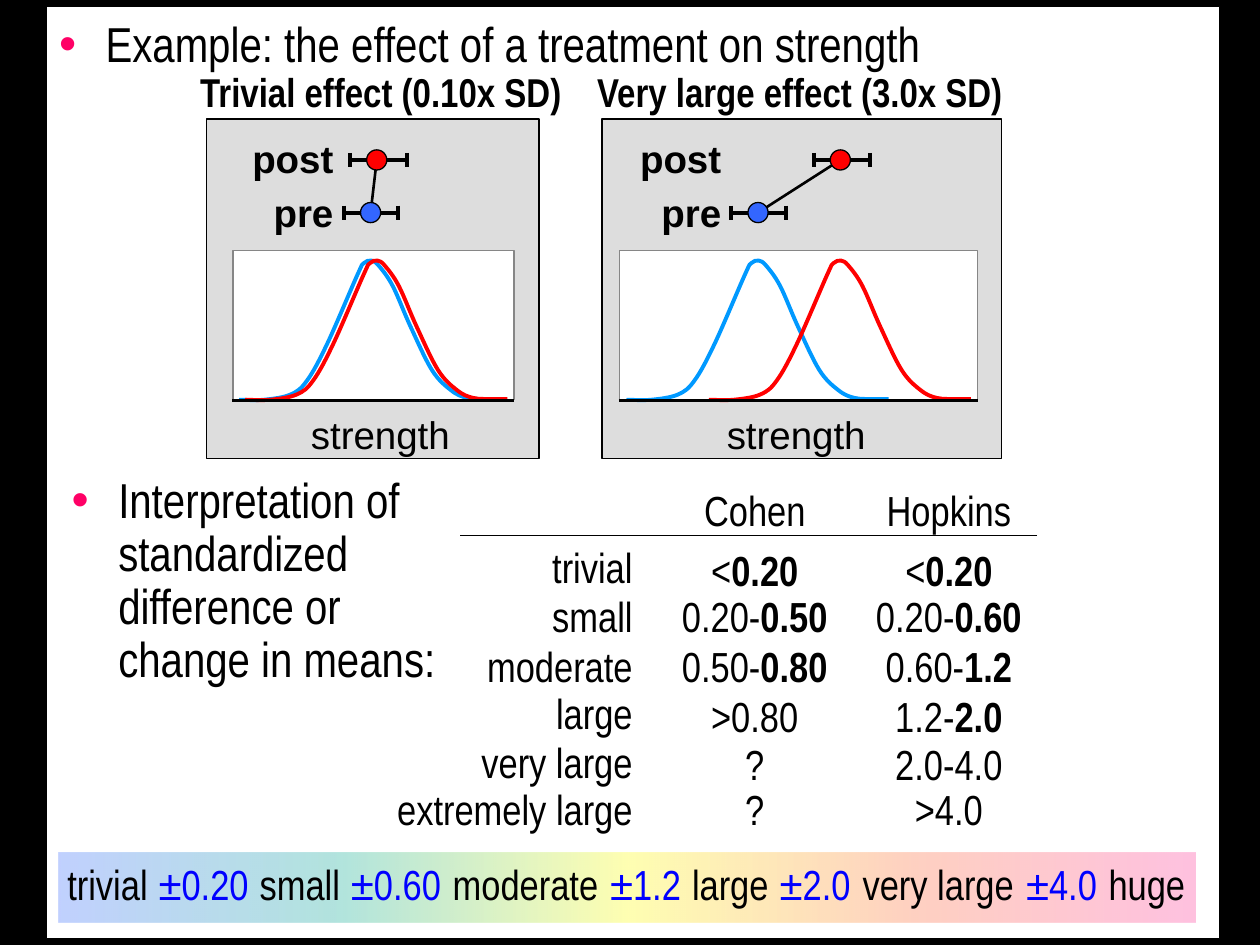
from lxml import etree
from pptx import Presentation
from pptx.dml.color import RGBColor
from pptx.enum.shapes import MSO_CONNECTOR, MSO_SHAPE
from pptx.enum.text import MSO_ANCHOR, MSO_AUTO_SIZE, PP_ALIGN
from pptx.oxml.ns import qn
from pptx.util import Pt

RECT, OVAL, LINE = MSO_SHAPE.RECTANGLE, MSO_SHAPE.OVAL, MSO_CONNECTOR.STRAIGHT
LEFT, CENTER, RIGHT = PP_ALIGN.LEFT, PP_ALIGN.CENTER, PP_ALIGN.RIGHT
TOP, FIXED, GROW = MSO_ANCHOR.TOP, MSO_AUTO_SIZE.NONE, MSO_AUTO_SIZE.SHAPE_TO_FIT_TEXT

T = dict(
    narrow="Arial Narrow", sans="Arial",
    bullet_size=28, body_size=24, title_size=23, label_size=22,
    black="000000", white="FFFFFF", panel="DDDDDD", frame="868686",
    bullet="FF0066", pre_curve="0099FF", pre_dot="3366FF", post="FF0000",
    threshold="0000FF",
    scale=[(0, "FF3399"), (25, "FF6633"), (50, "FFFF00"), (75, "01A78F"), (100, "3366FF")],
)

BULLETS = [
    ("Example: the effect of a treatment on strength", (26.6, 3.6, 670.3, 532.8), 0.95),
    ("Interpretation of \vstandardized\vdifference or\vchange in means:", (33.8, 265.7, 656, 174.2), 0.9),
]
PANELS = [
    dict(title="Trivial effect (0.10x SD)", title_x=107.3, title_w=223.2, box=(118.1, 190.1),
         plot=(133.2, 160.6), axis_x=217.4, label_right=197.6, pre=211.8, post=215.3),
    dict(title="Very large effect (3.0x SD)", title_x=334.1, title_w=247, box=(344.2, 228.2),
         plot=(354.2, 204.5), axis_x=455, label_right=419.2, pre=433.2, post=480.2),
]
BELL = [(-75.2, 0), (-60.8, 0), (-45.7, 3), (-36.3, 11), (-24.8, 32), (-7.5, 71.5),
        (-3.9, 78), (0.4, 79.5), (4.7, 76.5), (12.6, 65), (22.7, 42), (35, 17),
        (45.8, 5.5), (55.1, 1), (66.6, 0.4), (74.6, 0.4)]
COHEN_X, HOPKINS_X, LABEL_RIGHT = 431.3, 542.2, 368.6
HEADINGS = [("Cohen", 73.4, COHEN_X), ("Hopkins", 85.7, HOPKINS_X)]
ROWS = [
    (306, 307.4, ("trivial", 60.5), ("<", "0.20", 64.8), ("<", "0.20", 64.8)),
    (334.1, 334.1, ("small", 60.5), ("0.20-", "0.50", 98.6), ("0.20-", "0.60", 98.6)),
    (362.2, 362.2, ("moderate", 97.9), ("0.50-", "0.80", 98.6), ("0.60-", "1.2", 87.8)),
    (389.5, 391, ("large", 58.3), (">0.80", "", 64.8), ("1.2-", "2.0", 75.6)),
    (417.6, 418.3, ("very large", 100.8), ("?", "", 25.2), ("2.0-4.0", "", 75.6)),
    (444.2, 444.2, ("extremely large", 149), ("?", "", 25.2), (">4.0", "", 53.3)),
]
SCALE = [("trivial", 49), ("±0.20", 54.7), ("small", 49), ("±0.60", 54.7),
         ("moderate", 87.1), ("±1.2", 43.9), ("large", 46.8), ("±2.0", 43.9),
         ("very large", 90.7), ("±4.0", 43.9), ("huge", 47.5)]

prs = Presentation()
prs.slide_width, prs.slide_height = Pt(720), Pt(540)
s = prs.slides.add_slide(prs.slide_layouts[3])


def rgb(name):
    return RGBColor.from_string(T[name])


def style_run(r, size, font="narrow", color="black", bold=False):
    for key, value in dict(size=Pt(size), name=T[font], bold=bold).items():
        setattr(r.font, key, value)
    r.font.color.rgb = rgb(color)


def set_frame(tf, **values):
    for key, value in values.items():
        setattr(tf, key, value)


def add_label(text, x, y, w, h, size, align=CENTER, inset=7.2, spacing=None,
              strong="", bold=False, **fmt):
    tf = s.shapes.add_textbox(Pt(x), Pt(y), Pt(w), Pt(h)).text_frame
    set_frame(tf, word_wrap=False, auto_size=GROW, margin_left=Pt(inset), margin_right=Pt(inset))
    p = tf.paragraphs[0]
    p.alignment, p.line_spacing = align, spacing
    for part, heavy in ((text, bold), (strong, True)):
        if part:
            r = p.add_run()
            r.text = part
            style_run(r, size, bold=heavy, **fmt)


def add_block(kind, x, y, w, h, fill, line="black", weight=0.75):
    sp = s.shapes.add_shape(kind, Pt(x), Pt(y), Pt(w), Pt(h))
    sp.shadow.inherit = False
    sp.fill.solid()
    sp.fill.fore_color.rgb = rgb(fill)
    sp.line.color.rgb = rgb(line)
    sp.line.width = Pt(weight)
    return sp


def add_line(x1, y1, x2, y2, weight):
    cn = s.shapes.add_connector(LINE, Pt(x1), Pt(y1), Pt(x2), Pt(y2))
    cn.line.color.rgb = rgb("black")
    cn.line.width = Pt(weight)
    etree.SubElement(cn._element.spPr, qn("a:effectLst"))


def smooth_path(sp):
    knots = [(int(pt.get("x")), int(pt.get("y"))) for pt in sp._element.iter(qn("a:pt"))]
    ends = [knots[0], *knots, knots[-1]]
    for i, segment in enumerate(list(sp._element.iter(qn("a:lnTo")))):
        a, b, c, d = ends[i:i + 4]
        out = [q + (r - p) / 6 for p, q, r in zip(a, b, c)]
        back = [q - (r - p) / 6 for p, q, r in zip(b, c, d)]
        curve = etree.Element(qn("a:cubicBezTo"))
        for x, y in (out, back, c):
            etree.SubElement(curve, qn("a:pt"), x=str(round(x)), y=str(round(y)))
        segment.getparent().replace(segment, curve)


def add_bell(center, base, color):
    pts = [(Pt(center + x), Pt(base - y)) for x, y in BELL]
    fb = s.shapes.build_freeform(*pts[0])
    fb.add_line_segments(pts[1:], close=False)
    sp = fb.convert_to_shape()
    smooth_path(sp)
    sp.shadow.inherit = False
    sp.fill.background()
    sp.line.color.rgb = rgb(color)
    sp.line.width = Pt(2.25)


def add_bullets():
    title, *bodies = list(s.placeholders)
    title._element.getparent().remove(title._element)
    for sp, (text, place, spacing) in zip(bodies, BULLETS):
        sp.left, sp.top, sp.width, sp.height = map(Pt, place)
        set_frame(sp.text_frame, text=text, word_wrap=True, auto_size=FIXED,
                  vertical_anchor=TOP, margin_top=Pt(6.3))
        p = sp.text_frame.paragraphs[0]
        p.line_spacing, p.space_before = spacing, Pt(1.4)
        pPr = p._p.get_or_add_pPr()
        pPr.set("marL", str(Pt(26.6)))
        pPr.set("indent", str(Pt(-26.6)))
        clr = etree.SubElement(pPr, qn("a:buClr"))
        etree.SubElement(clr, qn("a:srgbClr"), val=T["bullet"])
        etree.SubElement(pPr, qn("a:buChar"), char="•")
        for r in p.runs:
            style_run(r, T["bullet_size"])
    page = bodies[0]
    page.fill.solid()
    page.fill.fore_color.rgb = rgb("white")
    page.line.color.rgb = rgb("black")
    page.line.width = Pt(0.75)


def add_panel(d):
    (box_x, box_w), (plot_x, plot_w) = d["box"], d["plot"]
    add_block(RECT, box_x, 67.9, box_w, 194.2, "panel", weight=1)
    add_block(RECT, plot_x, 143.3, plot_w, 85.2, "white", "frame")
    add_label("strength", d["axis_x"] - 46.8, 231.1, 93.6, 33.1, T["label_size"], font="sans")
    add_label(d["title"], d["title_x"], 34.9, d["title_w"], 35, T["title_size"], LEFT, bold=True)
    add_bell(d["pre"], 228.4, "pre_curve")
    add_bell(d["post"], 228.4, "post")
    add_line(plot_x - 0.5, 228.9, plot_x + plot_w, 228.9, 1.5)
    post_y, pre_y = 91.4, 121.5
    add_line(d["post"], post_y, d["pre"], pre_y, 1.5)
    for name, y, top, w, right, dot in [("post", post_y, 73.5, 61.2, 17.1, "post"),
                                        ("pre", pre_y, 104.4, 49, 15.8, "pre_dot")]:
        x = d[name]
        add_label(name, d["label_right"] - w, top, w, 33.8, T["label_size"], RIGHT,
                  font="sans", bold=True)
        for end in (x - 15.3, x + right):
            add_line(x, y, end, y, 2.25)
            add_line(end, y - 4, end, y + 4, 2.25)
        add_block(OVAL, x - 5.75, y - 5.75, 11.5, 11.5, dot)


def add_magnitudes():
    size, h = T["body_size"], 36
    for text, w, x in HEADINGS:
        add_label(text, x - w / 2, 273.6, w, h, size)
    add_line(592.6, 306, 262.8, 306, 0.75)
    for label_y, range_y, (label, label_w), cohen, hopkins in ROWS:
        add_label(label, LABEL_RIGHT - label_w, label_y, label_w, h, size, RIGHT)
        for x, (text, strong, w) in ((COHEN_X, cohen), (HOPKINS_X, hopkins)):
            add_label(text, x - w / 2, range_y, w, h, size, strong=strong)


def add_scale():
    sp = add_block(RECT, 33.5, 487.4, 649.4, 39.6, "white")
    sp.rotation = 180
    sp.line.fill.background()
    sp.fill.gradient()
    sp.fill.gradient_angle = 0
    stops = sp._element.spPr.find(qn("a:gradFill")).find(qn("a:gsLst"))
    for gs in list(stops):
        stops.remove(gs)
    for pos, color in T["scale"]:
        gs = etree.SubElement(stops, qn("a:gs"), pos=str(pos * 1000))
        clr = etree.SubElement(gs, qn("a:srgbClr"), val=color)
        etree.SubElement(clr, qn("a:alpha"), val="30000")
    x, gap = 36.9, 3.1
    for i, (text, w) in enumerate(SCALE):
        add_label(text, x, 490.3, w, 33.1, T["body_size"], inset=1.4, spacing=0.9,
                  color="threshold" if i % 2 else "black")
        x += w + gap


s.background.fill.solid()
s.background.fill.fore_color.rgb = rgb("black")
add_bullets()
add_magnitudes()
for panel in PANELS:
    add_panel(panel)
add_scale()
prs.save("out.pptx")
